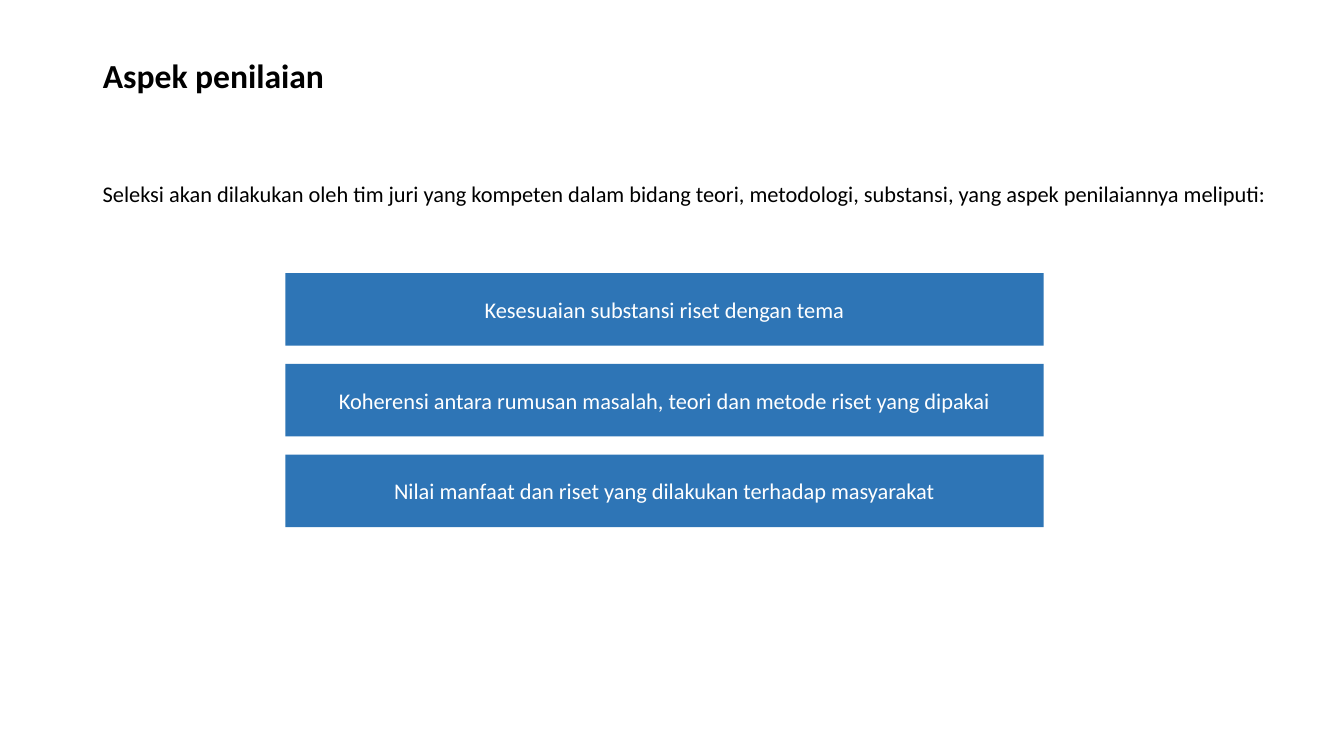
"""Build the slide listing the judging criteria."""
from dataclasses import dataclass

from pptx import Presentation
from pptx.dml.color import RGBColor
from pptx.enum.shapes import MSO_SHAPE
from pptx.enum.text import MSO_ANCHOR, PP_ALIGN
from pptx.util import Inches, Pt

RECTANGLE = MSO_SHAPE.RECTANGLE
TOP, MIDDLE = MSO_ANCHOR.TOP, MSO_ANCHOR.MIDDLE
LEFT, CENTER = PP_ALIGN.LEFT, PP_ALIGN.CENTER

TITLE = "Aspek penilaian"
INTRO = (
    "Seleksi akan dilakukan oleh tim juri yang kompeten dalam bidang teori, "
    "metodologi, substansi, yang aspek penilaiannya meliputi:"
)
CRITERIA = [
    "Kesesuaian substansi riset dengan tema",
    "Koherensi antara rumusan masalah, teori dan metode riset yang dipakai",
    "Nilai manfaat dan riset yang dilakukan terhadap masyarakat",
]


@dataclass(frozen=True)
class Theme:
    """Colours, font and type sizes of the slide."""

    font: str = "Calibri"
    ink: RGBColor = RGBColor(0x00, 0x00, 0x00)
    bar: RGBColor = RGBColor(0x2E, 0x75, 0xB6)
    bar_text: RGBColor = RGBColor(0xFF, 0xFF, 0xFF)
    title_size: int = 24
    body_size: int = 16


THEME = Theme()
MARGIN = 0.92
BAR_LEFT, BAR_TOP, BAR_WIDTH, BAR_HEIGHT = 2.83, 2.71, 7.52, 0.72
BAR_PITCH = 0.9


def write(shape, text, size, color, anchor, align=LEFT, bold=False, spacing=1.0):
    """Put one formatted paragraph into a shape."""
    frame = shape.text_frame
    frame.word_wrap = True
    frame.vertical_anchor = anchor
    para = frame.paragraphs[0]
    para.text = text
    para.alignment = align
    para.line_spacing = spacing
    para.font.name = THEME.font
    para.font.size = Pt(size)
    para.font.bold = bold
    para.font.color.rgb = color


def add_bar(page, top, text):
    """Add one criterion as a filled bar."""
    bar = page.shapes.add_shape(
        RECTANGLE, Inches(BAR_LEFT), Inches(top), Inches(BAR_WIDTH), Inches(BAR_HEIGHT)
    )
    bar.shadow.inherit = False
    bar.fill.solid()
    bar.fill.fore_color.rgb = THEME.bar
    bar.line.fill.background()
    write(bar, text, THEME.body_size, THEME.bar_text, MIDDLE, CENTER)


def main():
    """Build and save the deck."""
    deck = Presentation()
    deck.slide_width, deck.slide_height = Inches(13.33), Inches(7.5)
    page = deck.slides.add_slide(deck.slide_layouts[5])

    title = page.shapes.title
    title.left, title.top = Inches(MARGIN), Inches(0.37)
    title.width, title.height = Inches(11.5), Inches(0.79)
    write(title, TITLE, THEME.title_size, THEME.ink, MIDDLE, bold=True, spacing=0.9)

    intro = page.shapes.add_textbox(
        Inches(MARGIN), Inches(1.77), Inches(11.89), Inches(0.78)
    )
    write(intro, INTRO, THEME.body_size, THEME.ink, TOP, spacing=0.9)

    for index, criterion in enumerate(CRITERIA):
        add_bar(page, BAR_TOP + index * BAR_PITCH, criterion)

    deck.save("out.pptx")


if __name__ == "__main__":
    main()
